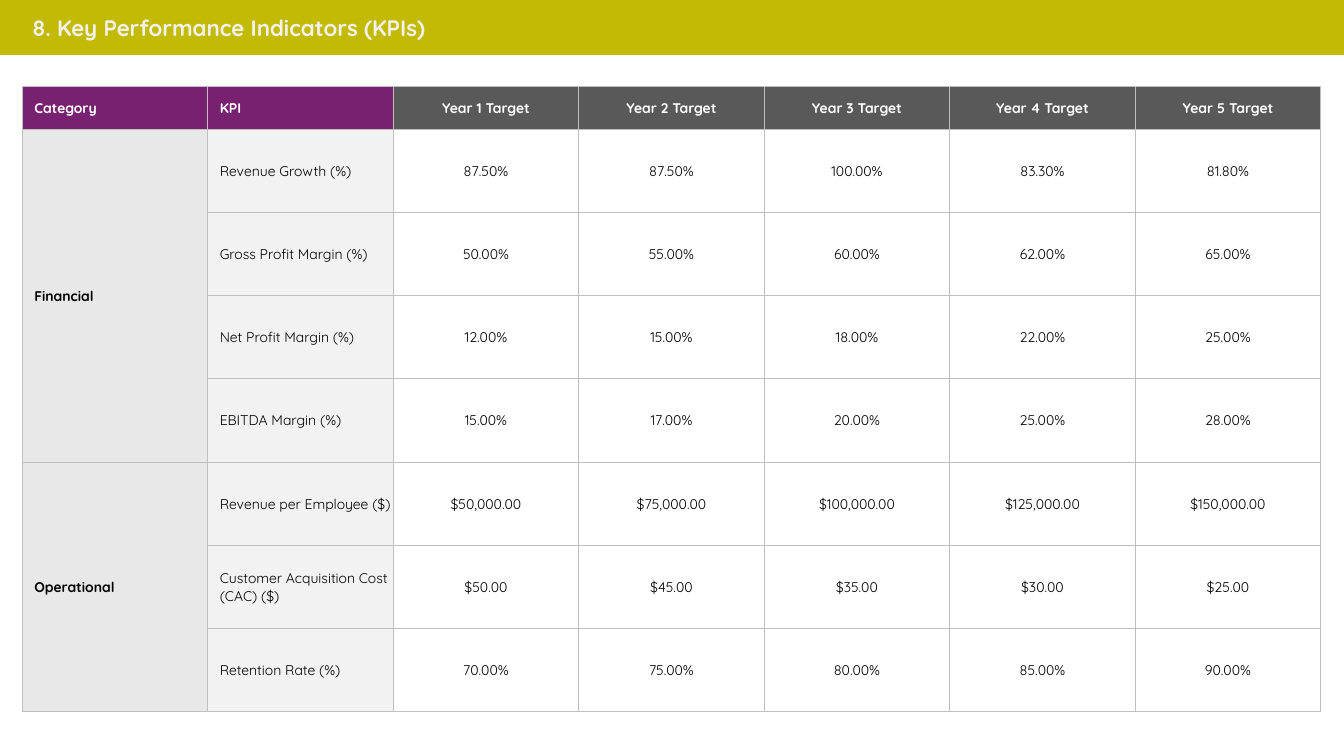
from lxml import etree
from pptx import Presentation
from pptx import util as u
from pptx.dml.color import RGBColor
from pptx.enum import shapes, text
from pptx.oxml import ns

TITLE = "8. Key Performance Indicators (KPIs)"
HEADER = ["Category", "KPI"] + [f"Year {n} Target" for n in range(1, 6)]
KPIS = {
    "Financial": [
        ("Revenue Growth (%)", "87.50%", "87.50%", "100.00%", "83.30%", "81.80%"),
        ("Gross Profit Margin (%)", "50.00%", "55.00%", "60.00%", "62.00%", "65.00%"),
        ("Net Profit Margin (%)", "12.00%", "15.00%", "18.00%", "22.00%", "25.00%"),
        ("EBITDA Margin (%)", "15.00%", "17.00%", "20.00%", "25.00%", "28.00%"),
    ],
    "Operational": [
        ("Revenue per Employee ($)", "$50,000.00", "$75,000.00", "$100,000.00",
         "$125,000.00", "$150,000.00"),
        ("Customer Acquisition Cost (CAC) ($)", "$50.00", "$45.00", "$35.00",
         "$30.00", "$25.00"),
        ("Retention Rate (%)", "70.00%", "75.00%", "80.00%", "85.00%", "90.00%"),
    ],
}
COLORS = {
    "band": "C3BA05", "title": "F2F2F2", "label_head": "782170", "year_head": "595959",
    "category": "E8E8E8", "kpi": "F2F2F2", "border": "BFBFBF",
    "white": "FFFFFF", "black": "000000",
}
FONT = "Quicksand"
LEFT, TOP, WIDTH, HEIGHT, HEAD_H = 0.22, 0.86, 12.88, 6.2, 0.42


def rgb(name):
    return RGBColor.from_string(COLORS[name])


def apply(obj, values):
    for name, value in values.items():
        setattr(obj, name, value)


def write(tf, words, size, color, bold, align=text.PP_ALIGN.LEFT):
    p = tf.paragraphs[0]
    p.alignment = align
    r = p.add_run()
    r.text = words
    apply(r.font, {"name": FONT, "size": u.Pt(size), "bold": bold})
    r.font.color.rgb = rgb(color)


def set_borders(cell, bottom):
    tc_pr = cell._tc.get_or_add_tcPr()
    for side, width in {"L": 0.5, "R": 0.5, "T": 0.5, "B": bottom}.items():
        ln = etree.SubElement(tc_pr, ns.qn(f"a:ln{side}"), w=str(u.Pt(width)))
        fill = etree.SubElement(ln, ns.qn("a:solidFill"))
        etree.SubElement(fill, ns.qn("a:srgbClr"), val=COLORS["border"])


def format_cell(cell, words, fill, color, bold, label, bottom):
    set_borders(cell, bottom)
    if fill:
        cell.fill.solid()
        cell.fill.fore_color.rgb = rgb(fill)
    else:
        cell.fill.background()
    apply(cell, {
        "vertical_anchor": text.MSO_ANCHOR.MIDDLE,
        "margin_left": u.Inches(0.12 if label else 0.01),
        "margin_right": u.Inches(0.01),
        "margin_top": u.Inches(0.01),
        "margin_bottom": 0,
    })
    if words:
        align = text.PP_ALIGN.LEFT if label else text.PP_ALIGN.CENTER
        write(cell.text_frame, words, 10, color, bold, align)


def add_title(s):
    title = s.shapes.title
    apply(title, {"left": u.Inches(0.22), "top": u.Inches(0.09),
                  "width": u.Inches(8.08), "height": u.Inches(0.37)})
    tf = title.text_frame
    apply(tf, {"word_wrap": True, "auto_size": text.MSO_AUTO_SIZE.NONE,
               "vertical_anchor": text.MSO_ANCHOR.TOP})
    write(tf, TITLE, 16, "title", True)

    band = s.shapes.add_shape(shapes.MSO_SHAPE.RECTANGLE, 0, 0,
                              u.Inches(13.33), u.Inches(0.54))
    band.shadow.inherit = False
    band.fill.solid()
    band.fill.fore_color.rgb = rgb("band")
    band.line.color.rgb = rgb("band")
    band.line.width = u.Pt(1.5)
    title.element.addprevious(band.element)


def add_kpi_table(s):
    rows = [HEADER]
    for category, kpis in KPIS.items():
        for i, kpi in enumerate(kpis):
            rows.append(["" if i else category, *kpi])
    last = len(rows) - 1

    table = s.shapes.add_table(len(rows), len(HEADER), u.Inches(LEFT), u.Inches(TOP),
                               u.Inches(WIDTH), u.Inches(HEIGHT)).table
    apply(table, {"first_row": False, "horz_banding": False})
    for col in table.columns:
        col.width = u.Inches(WIDTH / len(HEADER))
    for i, row in enumerate(table.rows):
        row.height = u.Inches((HEIGHT - HEAD_H) / last if i else HEAD_H)

    body_fills = {0: "category", 1: "kpi"}
    for i, row in enumerate(rows):
        for j, words in enumerate(row):
            label = j < 2
            if i == 0:
                fill, color = "label_head" if label else "year_head", "white"
            else:
                fill, color = body_fills.get(j), "black"
            format_cell(table.cell(i, j), words, fill, color, i == 0 or j == 0,
                        label, 1.5 if i == last else 0.5)

    start = 1
    for kpis in KPIS.values():
        end = start + len(kpis) - 1
        table.cell(start, 0).merge(table.cell(end, 0))
        if end == last:
            bottom_line = table.cell(start, 0)._tc.tcPr.find(ns.qn("a:lnB"))
            bottom_line.set("w", str(u.Pt(1.5)))
        start = end + 1


def main():
    prs = Presentation()
    apply(prs, {"slide_width": u.Inches(13.33), "slide_height": u.Inches(7.5)})
    s = prs.slides.add_slide(prs.slide_layouts[5])
    add_title(s)
    add_kpi_table(s)
    prs.save("out.pptx")


if __name__ == "__main__":
    main()
